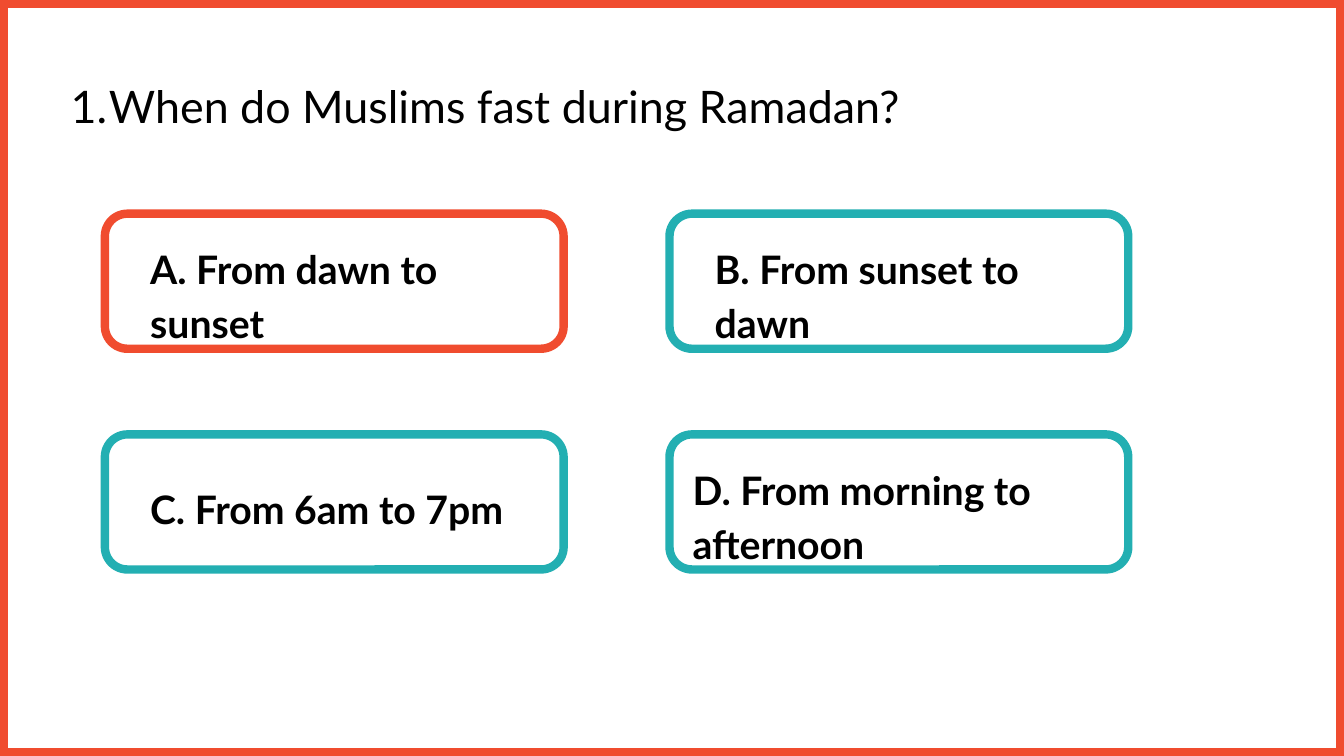
from lxml.etree import SubElement
from pptx import Presentation
from pptx.dml.color import RGBColor
from pptx.enum.shapes import MSO_SHAPE
from pptx.enum.text import MSO_ANCHOR, MSO_AUTO_SIZE, PP_ALIGN
from pptx.oxml.ns import qn
from pptx.util import Inches, Pt

ORANGE, TEAL, BLACK, WHITE = "F04C2F", "23AFB2", "000000", "FFFFFF"


def color(hex_string):
    return RGBColor.from_string(hex_string)


class QuizSlide:
    """Holds the quiz style and the slide being built."""

    font = "Lato"
    question_size, answer_size = 32, 28

    def __init__(self, deck):
        self.page = deck.slides.add_slide(deck.slide_layouts[1])
        self.page.background.fill.solid()
        self.page.background.fill.fore_color.rgb = color(WHITE)

    def outline(self, shape_type, left, top, width, height, line_color, line_width):
        box = self.page.shapes.add_shape(
            shape_type, Inches(left), Inches(top), Inches(width), Inches(height))
        box.shadow.inherit = False
        box.fill.background()
        box.line.color.rgb = color(line_color)
        box.line.width = Pt(line_width)
        return box

    def border(self, width, height):
        frame = self.outline(MSO_SHAPE.RECTANGLE, 0, 0, width, height, ORANGE, 12)
        self.page.shapes._spTree.insert(2, frame._element)  # send to back

    def set_text(self, box, place, text, size, bold, line_spacing):
        box.left, box.top, box.width, box.height = map(Inches, place)
        frame = box.text_frame
        frame.word_wrap = True
        frame.auto_size = MSO_AUTO_SIZE.NONE
        frame.text = text
        para = frame.paragraphs[0]
        para.alignment = PP_ALIGN.LEFT
        para.line_spacing = line_spacing
        para.space_before = Pt(0)
        for span in para.runs:
            span.font.name = self.font
            span.font.size = Pt(size)
            span.font.bold = bold
            span.font.color.rgb = color(BLACK)
        return para

    def question(self, number, text, place):
        title = self.page.shapes.title
        para = self.set_text(title, place, text, self.question_size, False, 1.25)
        title.text_frame.vertical_anchor = MSO_ANCHOR.MIDDLE
        para.space_after = Pt(6)
        # Automatic number with a hanging indent
        properties = para._p.get_or_add_pPr()
        properties.set("marL", str(Inches(0.38)))
        properties.set("indent", str(-Inches(0.38)))
        SubElement(properties, qn("a:buFont"), typeface=self.font)
        SubElement(properties, qn("a:buAutoNum"), type="arabicPeriod", startAt=str(number))
        tabs = SubElement(properties, qn("a:tabLst"))
        for position in (0.25, 0.5):
            SubElement(tabs, qn("a:tab"), pos=str(Inches(position)), algn="l")

    def answer(self, box, text, place):
        para = self.set_text(box, place, text, self.answer_size, True, 1.14)
        box.text_frame.vertical_anchor = MSO_ANCHOR.TOP
        properties = para._p.get_or_add_pPr()
        properties.set("marL", "0")
        properties.set("indent", "0")
        SubElement(properties, qn("a:buNone"))

    def text_box(self):
        return self.page.shapes.add_textbox(0, 0, Inches(1), Inches(1))


def main():
    deck = Presentation()
    deck.slide_width, deck.slide_height = Inches(13.33), Inches(7.5)
    quiz = QuizSlide(deck)

    # Border and question
    quiz.border(13.33, 7.5)
    quiz.question(1, "When do Muslims fast during Ramadan?", (0.6, 0.6, 12.13, 0.76))

    # Answers: text, outline, text offset inside the outline, text width
    answers = [
        ("A. From dawn to sunset", ORANGE, 0.35, 0.2, 3.97),
        ("B. From sunset to dawn", TEAL, 0.35, 0.2, 3.97),
        ("C. From 6am to 7pm", TEAL, 0.35, 0.39, 3.97),
        ("D. From morning to afternoon", TEAL, 0.13, 0.2, 4.42),
    ]
    for index, (text, line_color, inset_x, inset_y, width) in enumerate(answers):
        row, column = divmod(index, 2)
        left, top = 1.04 + 5.6 * column, 2.12 + 2.19 * row
        quiz.outline(MSO_SHAPE.FLOWCHART_ALTERNATE_PROCESS,
                     left, top, 4.55, 1.34, line_color, 6)
        box = quiz.text_box() if index else quiz.page.placeholders[1]
        quiz.answer(box, text, (left + inset_x, top + inset_y, width, 0.95))

    deck.save("out.pptx")


if __name__ == "__main__":
    main()
